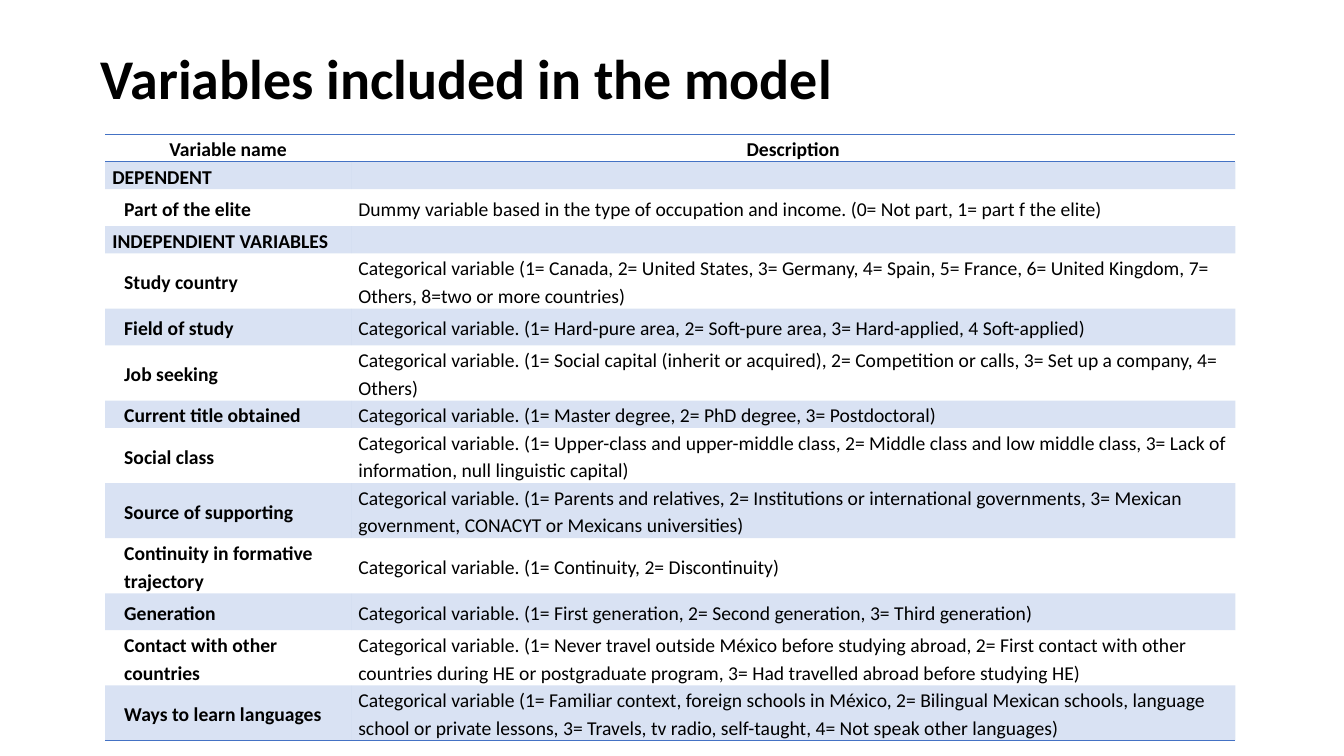
from lxml import etree
from pptx import Presentation
from pptx.dml.color import RGBColor
from pptx.enum.text import MSO_ANCHOR, PP_ALIGN
from pptx.oxml.ns import qn
from pptx.util import Cm, Pt

MIDDLE, TOP = MSO_ANCHOR.MIDDLE, MSO_ANCHOR.TOP
LEFT, CENTER = PP_ALIGN.LEFT, PP_ALIGN.CENTER
FONT, BLACK, BLUE = "Calibri", "000000", "4472C4"
PLAIN_STYLE = "{2D5ABB26-0587-4C30-8999-92F81FD0307C}"
SLIM, MID, HIGH = 0.69, 0.93, 1.39  # row heights in cm
WIDTHS = 6.2, 22.28
INDENT = 0.3

HEADS = "Variable name", "Description"
ROWS = [
    (SLIM, "DEPENDENT", ""),
    (MID, "Part of the elite",
     "Dummy variable based in the type of occupation and income. "
     "(0= Not part, 1= part f the elite)"),
    (SLIM, "INDEPENDIENT VARIABLES", ""),
    (HIGH, "Study country",
     "Categorical variable (1= Canada, 2= United States, 3= Germany, 4= Spain, "
     "5= France, 6= United Kingdom, 7= Others, 8=two or more countries)"),
    (MID, "Field of study",
     "Categorical variable. (1= Hard-pure area, 2= Soft-pure area, "
     "3= Hard-applied, 4 Soft-applied)"),
    (HIGH, "Job seeking",
     "Categorical variable. (1= Social capital (inherit or acquired), "
     "2= Competition or calls, 3= Set up a company, 4= Others)"),
    (SLIM, "Current title obtained",
     "Categorical variable. (1= Master degree, 2= PhD degree, 3= Postdoctoral)"),
    (HIGH, "Social class",
     "Categorical variable. (1= Upper-class and upper-middle class, "
     "2= Middle class and low middle class, 3= Lack of information, "
     "null linguistic capital)"),
    (HIGH, "Source of supporting",
     "Categorical variable. (1= Parents and relatives, 2= Institutions or "
     "international governments, 3= Mexican government, CONACYT or Mexicans "
     "universities)"),
    (HIGH, "Continuity in formative trajectory",
     "Categorical variable. (1= Continuity, 2= Discontinuity)"),
    (MID, "Generation",
     "Categorical variable. (1= First generation, 2= Second generation, "
     "3= Third generation)"),
    (HIGH, "Contact with other countries",
     "Categorical variable. (1= Never travel outside México before studying "
     "abroad, 2= First contact with other countries during HE or postgraduate "
     "program, 3= Had travelled abroad before studying HE)"),
    (HIGH, "Ways to learn languages",
     "Categorical variable (1= Familiar context, foreign schools in México, "
     "2= Bilingual Mexican schools, language school or private lessons, "
     "3= Travels, tv radio, self-taught, 4= Not speak other languages)"),
]


def paint(target, color):
    target.solid()
    target.fore_color.rgb = RGBColor.from_string(color)


def write(para, text, size, bold, spacing, align=LEFT):
    para.text = text
    para.alignment = align
    para.line_spacing = spacing
    font = para.font
    font.name, font.size, font.bold = FONT, Pt(size), bold
    paint(font.fill, BLACK)


def add_title(slide, text):
    box = slide.shapes.add_textbox(Cm(2.29), Cm(0.2), Cm(29.21), Cm(3.68))
    frame = box.text_frame
    frame.word_wrap = True
    frame.vertical_anchor = MIDDLE
    write(frame.paragraphs[0], text, 40, True, 0.9)


def rule(cell, side):
    """Draw a blue border on one side: lnT or lnB."""
    props = cell._tc.get_or_add_tcPr()
    line = etree.SubElement(props, qn(f"a:{side}"), w=str(Pt(1)))
    fill = etree.SubElement(line, qn("a:solidFill"))
    etree.SubElement(fill, qn("a:srgbClr"), val=BLUE)


def shade(cell):
    """Fill with blue at 20 % opacity."""
    paint(cell.fill, BLUE)
    color = cell._tc.tcPr.find(".//" + qn("a:solidFill") + "/" + qn("a:srgbClr"))
    for color in cell._tc.tcPr.findall(f"{qn('a:solidFill')}/{qn('a:srgbClr')}"):
        etree.SubElement(color, qn("a:alpha"), val="20000")


def fill_cell(cell, text, bold, align=LEFT, anchor=MIDDLE, sides=(), band=False):
    cell.margin_left = cell.margin_right = Cm(0.18)
    cell.margin_top = cell.margin_bottom = 0
    cell.vertical_anchor = anchor
    write(cell.text_frame.paragraphs[0], text, 14, bold, 1.15, align)
    for side in sides:
        rule(cell, side)
    if band:
        shade(cell)
    else:
        cell.fill.background()


def add_grid(slide):
    heights = [SLIM] + [row[0] for row in ROWS]
    frame = slide.shapes.add_table(
        len(heights), len(WIDTHS), Cm(2.65), Cm(3.39),
        Cm(sum(WIDTHS)), Cm(sum(heights)))
    table = frame.table
    table.first_row = table.horz_banding = False
    table._tbl.tblPr.find(qn("a:tableStyleId")).text = PLAIN_STYLE
    for column, width in zip(table.columns, WIDTHS):
        column.width = Cm(width)
    for row, height in zip(table.rows, heights):
        row.height = Cm(height)

    for col, head in enumerate(HEADS):
        fill_cell(table.cell(0, col), head, True, CENTER, TOP, ("lnT", "lnB"))
    for num, (_, name, about) in enumerate(ROWS, 1):
        look = {"band": num % 2 == 1,
                "sides": ("lnB",) if num == len(ROWS) else ()}
        label = table.cell(num, 0)
        fill_cell(label, name, True, **look)
        fill_cell(table.cell(num, 1), about, False, **look)
        if about:
            props = label.text_frame.paragraphs[0]._p.get_or_add_pPr()
            props.set("marL", str(Cm(INDENT)))
            props.set("indent", "0")


def main():
    deck = Presentation()
    deck.slide_width, deck.slide_height = Cm(33.87), Cm(19.05)
    slide = deck.slides.add_slide(deck.slide_layouts[6])
    add_title(slide, "Variables included in the model")
    add_grid(slide)
    deck.save("out.pptx")


if __name__ == "__main__":
    main()
